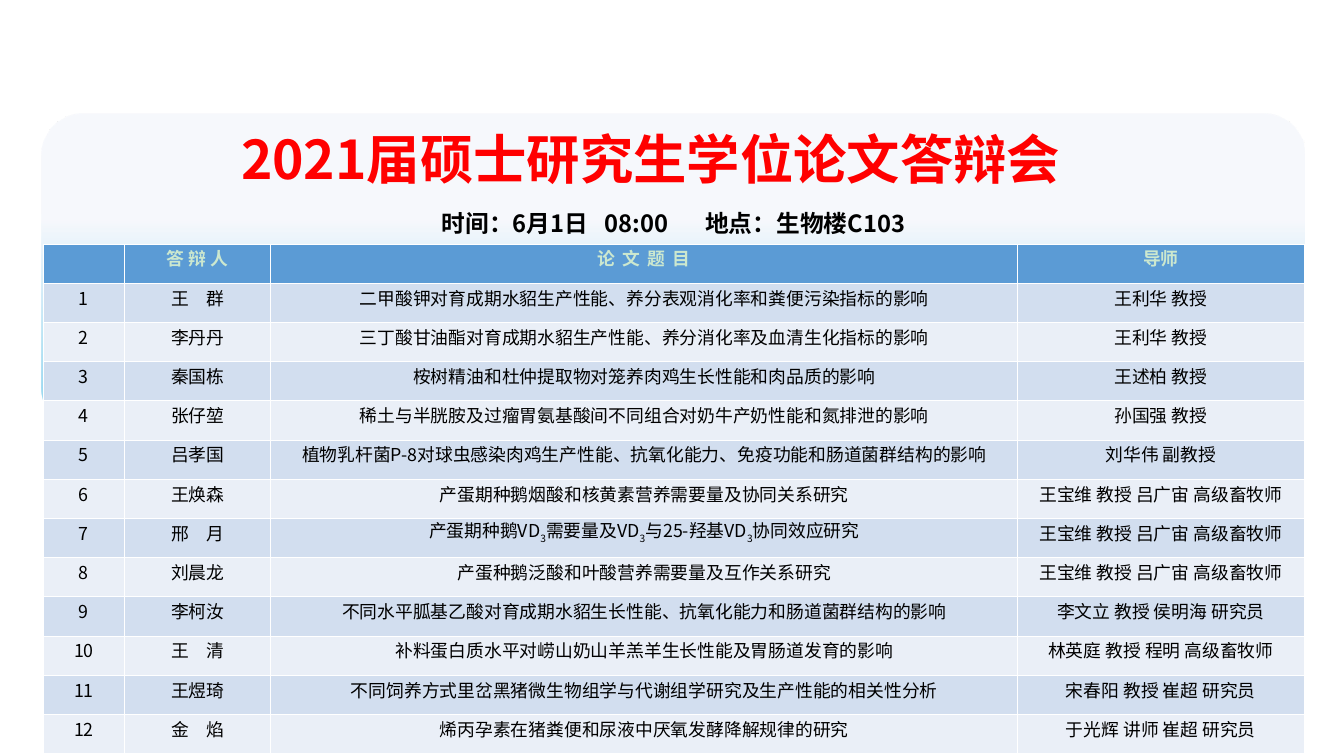
from lxml import etree
from pptx import Presentation
from pptx.dml.color import RGBColor
from pptx.enum.shapes import MSO_SHAPE
from pptx.enum.text import MSO_ANCHOR, PP_ALIGN
from pptx.oxml.ns import qn
from pptx.util import Inches, Pt

MIDDLE, TOP = MSO_ANCHOR.MIDDLE, MSO_ANCHOR.TOP
CENTER = PP_ALIGN.CENTER
ROUND = MSO_SHAPE.ROUNDED_RECTANGLE
FONT = "Noto Sans CJK SC"
WIDE, HIGH = 18.9, 10.63

TITLE = "2021届硕士研究生学位论文答辩会"
# Pieces of the date line, each with its letter spacing in points
WHEN = [("时间：6月1日", 0), (" ", 10.8), ("08:00", 0), (" ", 32.3),
        ("地点：生物楼C103", 0)]
HEAD = ["", "答 辩 人", "论 文 题 目", "导师"]
# ₃ marks a lowered 3
THESES = [
    ("王　群", "二甲酸钾对育成期水貂生产性能、养分表观消化率和粪便污染指标的影响", "王利华 教授"),
    ("李丹丹", "三丁酸甘油酯对育成期水貂生产性能、养分消化率及血清生化指标的影响", "王利华 教授"),
    ("秦国栋", "桉树精油和杜仲提取物对笼养肉鸡生长性能和肉品质的影响", "王述柏 教授"),
    ("张仔堃", "稀土与半胱胺及过瘤胃氨基酸间不同组合对奶牛产奶性能和氮排泄的影响", "孙国强 教授"),
    ("吕孝国", "植物乳杆菌P-8对球虫感染肉鸡生产性能、抗氧化能力、免疫功能和肠道菌群结构的影响",
     "刘华伟 副教授"),
    ("王焕森", "产蛋期种鹅烟酸和核黄素营养需要量及协同关系研究", "王宝维 教授 吕广宙 高级畜牧师"),
    ("邢　月", "产蛋期种鹅VD₃需要量及VD₃与25-羟基VD₃协同效应研究", "王宝维 教授 吕广宙 高级畜牧师"),
    ("刘晨龙", "产蛋种鹅泛酸和叶酸营养需要量及互作关系研究", "王宝维 教授 吕广宙 高级畜牧师"),
    ("李柯汝", "不同水平胍基乙酸对育成期水貂生长性能、抗氧化能力和肠道菌群结构的影响",
     "李文立 教授 侯明海 研究员"),
    ("王　清", "补料蛋白质水平对崂山奶山羊羔羊生长性能及胃肠道发育的影响", "林英庭 教授 程明 高级畜牧师"),
    ("王煜琦", "不同饲养方式里岔黑猪微生物组学与代谢组学研究及生产性能的相关性分析",
     "宋春阳 教授 崔超 研究员"),
    ("金　焰", "烯丙孕素在猪粪便和尿液中厌氧发酵降解规律的研究", "于光辉 讲师 崔超 研究员"),
]
COLS = [1.14, 2.06, 10.5, 4.03]
TABLE = (0.61, 3.43, sum(COLS), 7.17)
BANDS = ["EAEFF7", "D2DEEF"]


def color(code):
    return RGBColor.from_string(code)


def style(run, size, code, bold):
    font = run.font
    font.size, font.bold = Pt(size), bold
    font.color.rgb = color(code)
    font.name = FONT
    etree.SubElement(font._element, qn("a:ea"), typeface=FONT)


def place(shape, left, top, width, height):
    shape.left, shape.top = Inches(left), Inches(top)
    shape.width, shape.height = Inches(width), Inches(height)


def write(para, parts, size, code, bold, line):
    """Fill a centred paragraph with (text, letter spacing, baseline) parts."""
    para.alignment, para.line_spacing = CENTER, line
    para.space_before = Pt(0)
    for text, gap, base in parts:
        run = para.add_run()
        run.text = text
        style(run, size, code, bold)
        if gap:
            run.font._element.set("spc", str(round(gap * 100)))
        if base:
            run.font._element.set("baseline", str(base * 1000))


def add_panel(slide):
    panel = slide.shapes.add_shape(ROUND, 0, 0, 0, 0)
    place(panel, 0.59, 1.6, 17.76, 4.42)
    panel.adjustments[0] = 0.13
    panel.shadow.inherit = False
    panel.line.fill.background()
    panel.fill.gradient()
    panel.fill.gradient_angle = 270
    stops = panel.fill.gradient_stops
    for stop, spot, code in zip(stops, (0.33, 1), ("F6F8FC", "87D2EF")):
        stop.position, stop.color.rgb = spot, color(code)
    clear = next(panel._element.iter(qn("a:srgbClr")))
    etree.SubElement(clear, qn("a:alpha"), val="89000")
    slide.shapes._spTree.insert(2, panel._element)


def add_heads(slide):
    title, when = slide.placeholders
    place(title, -0.03, 1.58, 18.36, 1.39)
    place(when, 0.55, 2.69, 17.84, 0.95)
    title.text_frame.vertical_anchor = MIDDLE
    when.text_frame.vertical_anchor = TOP
    write(title.text_frame.paragraphs[0], [(TITLE, 0, 0)], 54, "FF0000", True, 0.9)
    write(when.text_frame.paragraphs[0], [(t, gap, 0) for t, gap in WHEN],
          24, "000000", True, 1.5)


def add_list(slide):
    rows = [HEAD] + [(str(n), *item) for n, item in enumerate(THESES, 1)]
    box = [Inches(v) for v in TABLE]
    table = slide.shapes.add_table(len(rows), len(COLS), *box).table
    for col, width in zip(table.columns, COLS):
        col.width = Inches(width)
    for r, row in enumerate(rows):
        head = r == 0
        for c, text in enumerate(row):
            cell = table.cell(r, c)
            cell.vertical_anchor = MIDDLE
            cell.fill.solid()
            cell.fill.fore_color.rgb = color("5B9BD5" if head else BANDS[r % 2])
            gap = 1.7 if head and c == 2 else 0
            bits = text.replace("₃", "|3|").split("|")
            parts = [(bit, gap, -25 * (i % 2)) for i, bit in enumerate(bits) if bit]
            write(cell.text_frame.paragraphs[0], parts, 18,
                  "CCE8CF" if head else "000000", head, Pt(15))


def main():
    deck = Presentation()
    deck.slide_width, deck.slide_height = Inches(WIDE), Inches(HIGH)
    slide = deck.slides.add_slide(deck.slide_layouts[0])
    add_panel(slide)
    add_heads(slide)
    add_list(slide)
    deck.save("out.pptx")


if __name__ == "__main__":
    main()
